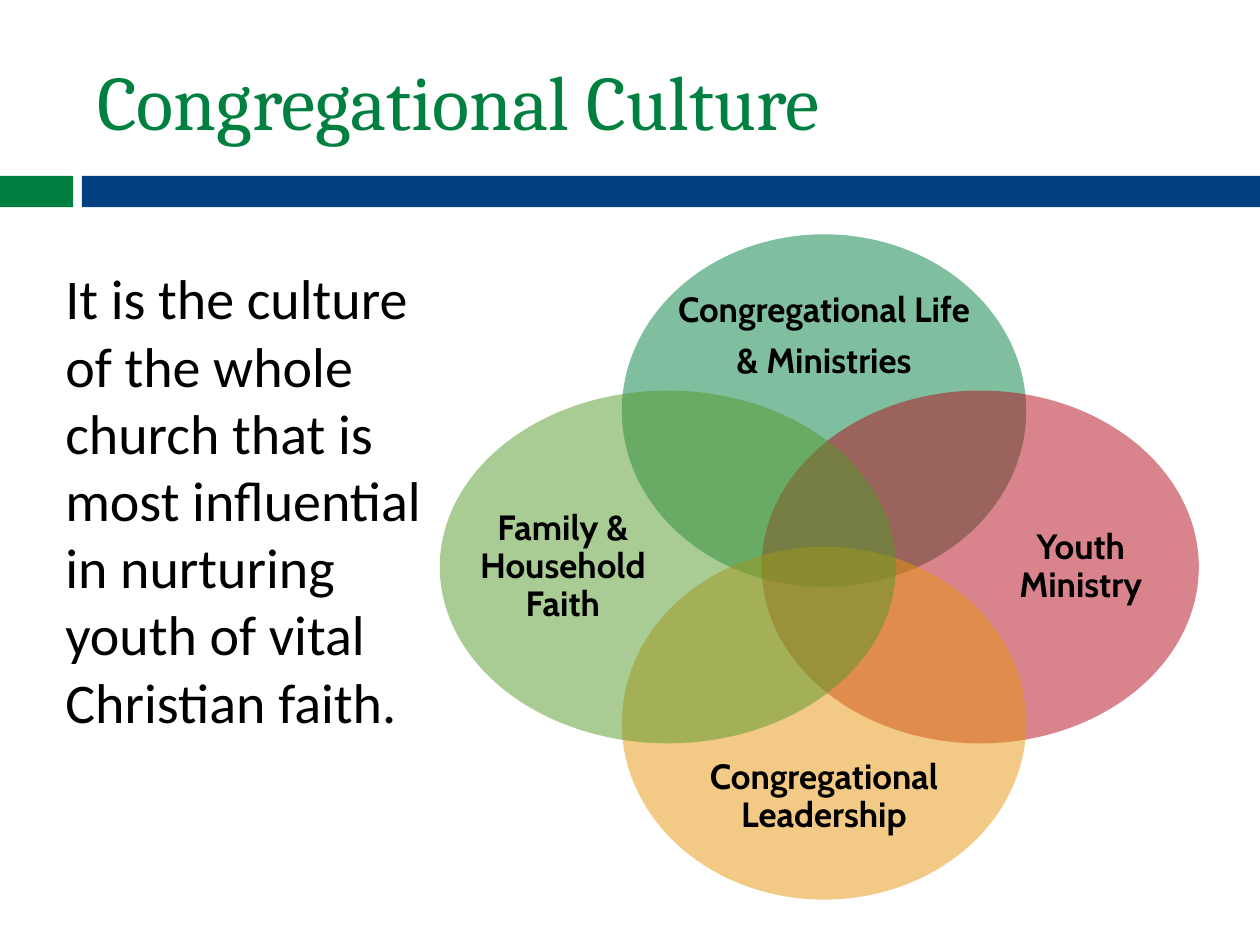
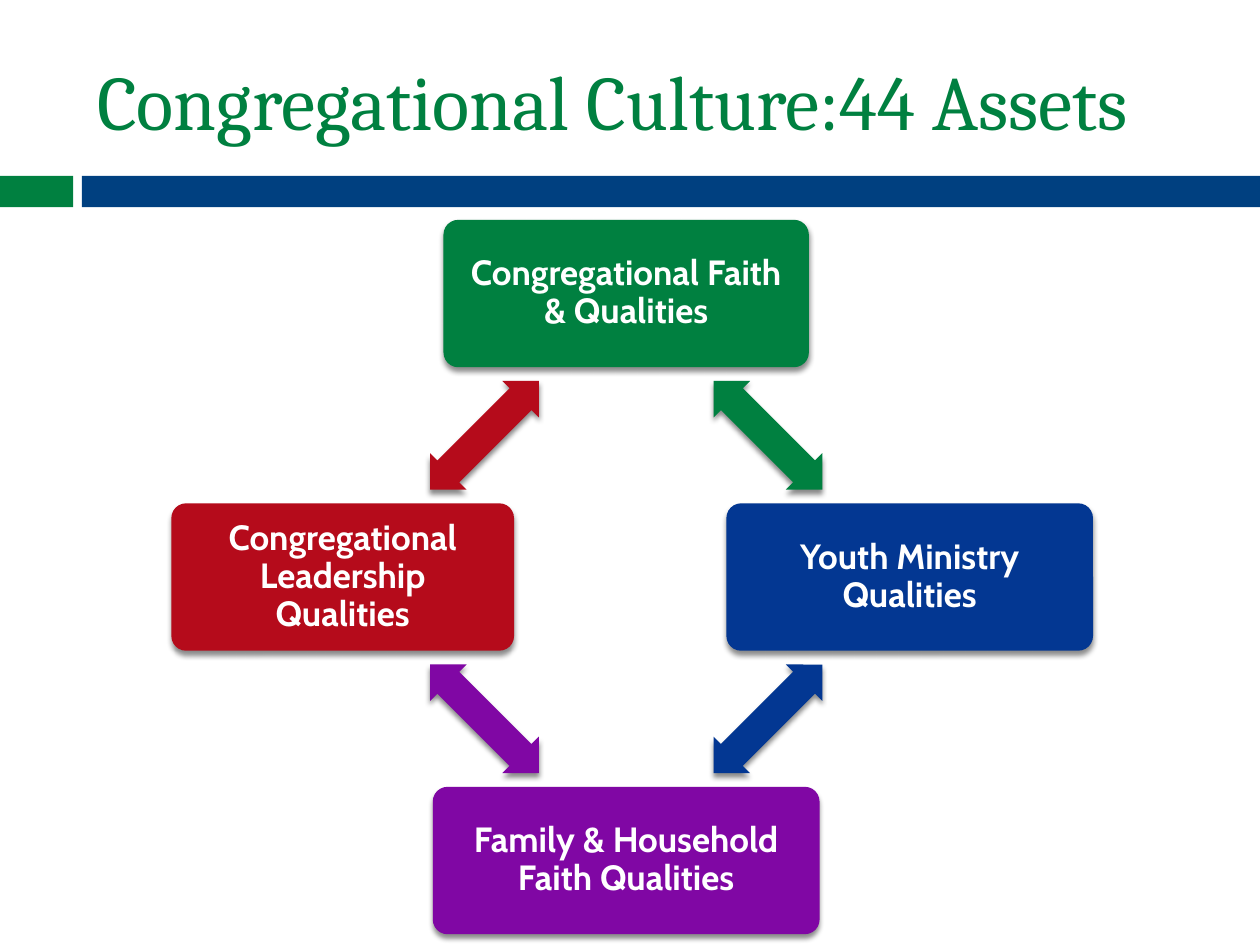
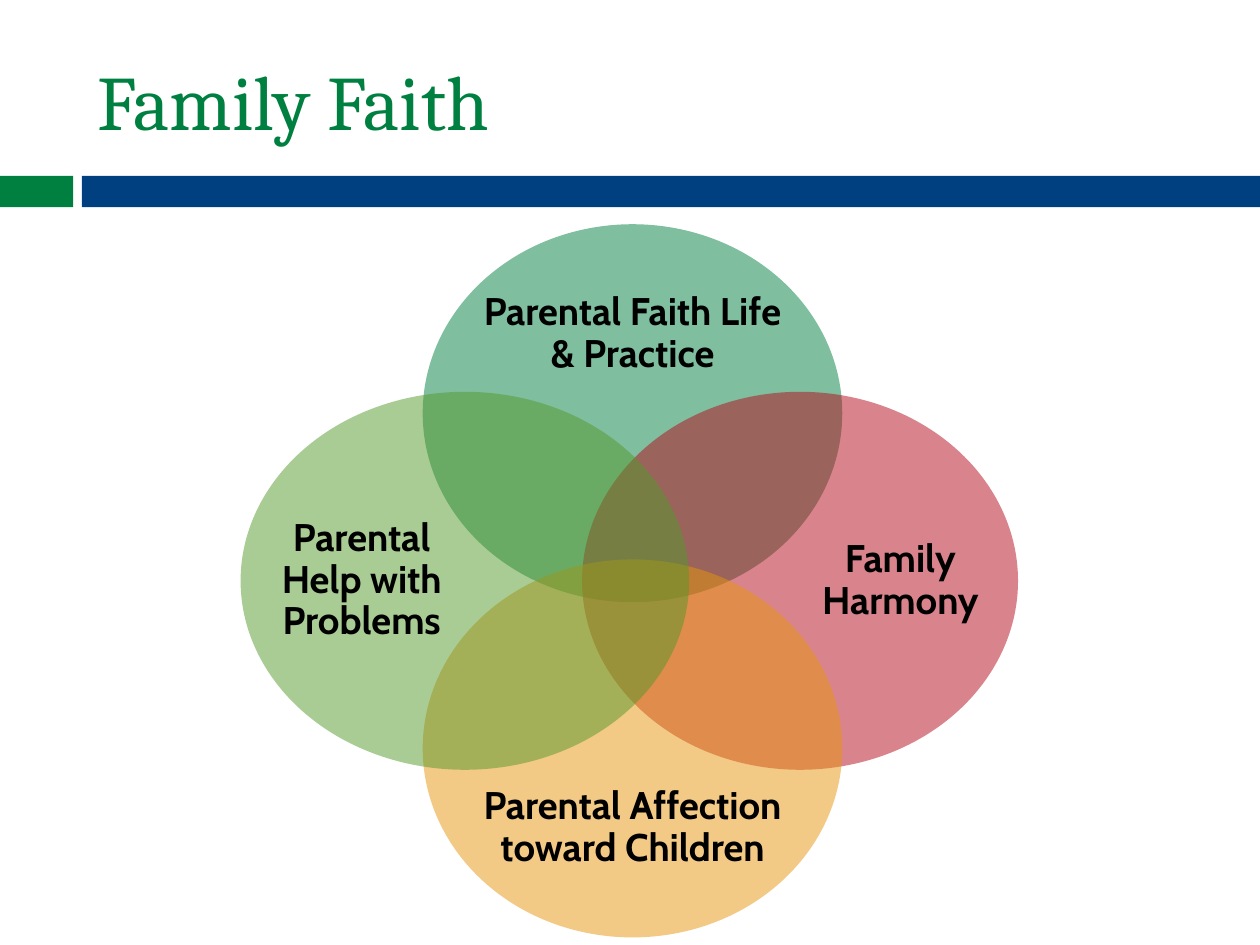
"""Build three slides on congregational culture and family faith."""
from lxml import etree
from pptx import Presentation
from pptx.dml.color import RGBColor
from pptx.enum import shapes, text
from pptx.oxml import ns
from pptx.util import Inches, Pt

GREEN = RGBColor(0x00, 0x80, 0x40)
NAVY = RGBColor(0x00, 0x40, 0x80)
BLUE = RGBColor(0x03, 0x37, 0x92)
RED = RGBColor(0xB5, 0x0B, 0x1B)
ORANGE = RGBColor(0xE8, 0x95, 0x0E)
LEAF = RGBColor(0x55, 0x99, 0x2B)
PURPLE = RGBColor(0x80, 0x07, 0xA4)
BLACK = RGBColor(0, 0, 0)
WHITE = RGBColor(0xFF, 0xFF, 0xFF)

SHAPE = shapes.MSO_SHAPE
DIRECTIONS = [(0, -1), (1, 0), (0, 1), (-1, 0)]
PETAL_COLORS = [GREEN, RED, ORANGE, LEAF]
LABEL_CENTERS = [(0.5, 0.29), (0.73, 0.5), (0.5, 0.71), (0.27, 0.5)]
LABEL_SIZES = [(0.77, 0.32), (0.38, 0.77)]


class Deck:
    """Hold the shared style and the current slide."""

    title_style = {"name": "Cambria", "size": Pt(44)}
    body_style = {"name": "Calibri", "size": Pt(32)}
    label_style = {"name": "Cabin", "bold": True}

    def __init__(self):
        """Set up the presentation and the layout every slide uses."""
        self.prs = Presentation()
        self.prs.slide_width, self.prs.slide_height = Inches(10), Inches(7.5)
        self.layout = self.prs.slide_layouts.get_by_name("Title Only")
        title = self.layout.placeholders[0]
        for name, value in zip(("left", "top", "width", "height"), (0.67, 0.25, 8.92, 1.08)):
            setattr(title, name, Inches(value))
        self.s = None

    def add_slide(self, title):
        """Start a slide with its title; the first one also supplies the layout bands."""
        first = self.s is None
        self.s = self.prs.slides.add_slide(self.layout)
        if first:
            self.add_layout_bands()
        tf = self.s.shapes.title.text_frame
        self.fill_text(tf, [title], GREEN, self.title_style, align=text.PP_ALIGN.LEFT)
        tf.auto_size = text.MSO_AUTO_SIZE.NONE

    def add_layout_bands(self):
        """Move the two title bands onto the layout."""
        for i, (left, width, color) in enumerate([(0, 0.58, GREEN), (0.65, 9.35, NAVY)]):
            sp = self.shape(SHAPE.RECTANGLE, left + width / 2, 1.52, width, 0.25, color)
            sp._element.nvSpPr.cNvPr.id = 20 + i
            self.layout.shapes._spTree.append(sp._element)

    def fill_text(self, tf, lines, color, style, align=None, margin=None,
                  anchor=text.MSO_ANCHOR.MIDDLE, **spacing):
        """Fill a text frame, one paragraph a line."""
        tf.word_wrap, tf.vertical_anchor = True, anchor
        if margin is not None:
            for side in ("left", "top", "right", "bottom"):
                setattr(tf, f"margin_{side}", Inches(margin))
        for i, line in enumerate(lines):
            p = tf.add_paragraph() if i else tf.paragraphs[0]
            p.alignment = align
            for name, value in spacing.items():
                setattr(p, name, value)
            r = p.add_run()
            r.text = line
            for name, value in style.items():
                setattr(r.font, name, value)
            r.font.color.rgb = color

    def label(self, tf, lines, color, size, margin=0):
        """Put a bold centred diagram label in a text frame."""
        self.fill_text(tf, lines, color, {**self.label_style, "size": Pt(size)},
                       align=text.PP_ALIGN.CENTER, margin=margin,
                       line_spacing=0.9, space_after=Pt(0.35 * size))

    def textbox(self, x, y, w, h):
        """Add a text box by its centre and return its text frame."""
        box = self.s.shapes.add_textbox(*map(Inches, (x - w / 2, y - h / 2, w, h)))
        return box.text_frame

    def body(self, x, y, w, h, line):
        """Add a block of running text."""
        self.fill_text(self.textbox(x, y, w, h), [line], BLACK, self.body_style,
                       anchor=text.MSO_ANCHOR.TOP)

    def shape(self, kind, x, y, w, h, color, adjustments=()):
        """Add a flat filled shape by its centre."""
        sp = self.s.shapes.add_shape(kind, *map(Inches, (x - w / 2, y - h / 2, w, h)))
        sp.shadow.inherit = False
        sp.fill.solid()
        sp.fill.fore_color.rgb = color
        sp.line.fill.background()
        for i, value in enumerate(adjustments):
            sp.adjustments[i] = value
        return sp

    def alpha(self, color_element, percent):
        """Set the opacity of a colour element."""
        etree.SubElement(color_element, ns.qn("a:alpha"), val=str(percent * 1000))

    def drop_shadow(self, sp):
        """Give a shape a soft shadow below it."""
        effects = sp._element.spPr.find(ns.qn("a:effectLst"))
        shadow = etree.SubElement(effects, ns.qn("a:outerShdw"), blurRad=str(int(Pt(3))),
                                  dist=str(int(Pt(2.4))), dir="5400000", rotWithShape="0")
        self.alpha(etree.SubElement(shadow, ns.qn("a:srgbClr"), val=str(BLACK)), 45)

    def venn(self, x, y, reach, widths, height, size, labels):
        """Draw four overlapping ellipses around a hub, clockwise from the top."""
        for i, (dx, dy) in enumerate(DIRECTIONS):
            w, cx, cy = widths[i], x + reach * dx, y + reach * dy
            sp = self.shape(SHAPE.OVAL, cx, cy, w, height, PETAL_COLORS[i])
            self.alpha(sp._element.spPr.find(".//" + ns.qn("a:srgbClr")), 50)
            (fx, fy), (fw, fh) = LABEL_CENTERS[i], LABEL_SIZES[i % 2]
            tf = self.textbox(cx + (fx - 0.5) * w, cy + (fy - 0.5) * height,
                              fw * w, fh * height)
            self.label(tf, labels[i], BLACK, size)

    def cycle(self, x, y, reach, boxes):
        """Draw four boxes around a hub, each joined to the next by a block arrow."""
        for i, (label, width, color) in enumerate(boxes):
            (dx, dy), (nx, ny) = DIRECTIONS[i], DIRECTIONS[(i + 1) % 4]
            box = self.shape(SHAPE.ROUNDED_RECTANGLE, x + reach * dx, y + reach * dy,
                             width, 1.17, color, [0.1])
            self.label(box.text_frame, [label], WHITE, 20, margin=0.11)
            arrow = self.shape(SHAPE.LEFT_RIGHT_ARROW, x + reach * (dx + nx) / 2,
                               y + reach * (dy + ny) / 2, 1.22, 0.41, color, [0.6, 0.5])
            arrow.rotation = 45 + 90 * i
            for sp in (box, arrow):
                self.drop_shadow(sp)


def main():
    """Build and save the slides."""
    deck = Deck()

    deck.add_slide("Congregational Culture")
    deck.venn(6.54, 4.5, 1.24, [3.21, 3.47, 3.21, 3.62], 2.8, 20, [
        ["Congregational Life", "& Ministries"],
        ["Youth Ministry"],
        ["Congregational Leadership"],
        ["Family & Household Faith"],
    ])
    deck.body(1.94, 4.25, 3.04, 4.41,
              "It is the culture of the whole church that is most influential "
              "in nurturing youth of vital Christian faith.")

    deck.add_slide("Congregational Culture:44 Assets")
    deck.cycle(4.97, 4.58, 2.25, [
        ("Congregational Faith & Qualities", 2.9, GREEN),
        ("Youth Ministry Qualities", 2.91, BLUE),
        ("Family & Household Faith Qualities", 3.07, PURPLE),
        ("Congregational Leadership Qualities", 2.72, RED),
    ])

    deck.add_slide("Family Faith")
    deck.venn(5.02, 4.61, 1.33, [3.33, 3.46, 3.33, 3.56], 3, 22, [
        ["Parental Faith Life & Practice"],
        ["Family Harmony"],
        ["Parental Affection toward Children"],
        ["Parental Help with Problems"],
    ])

    deck.prs.save("out.pptx")


if __name__ == "__main__":
    main()
